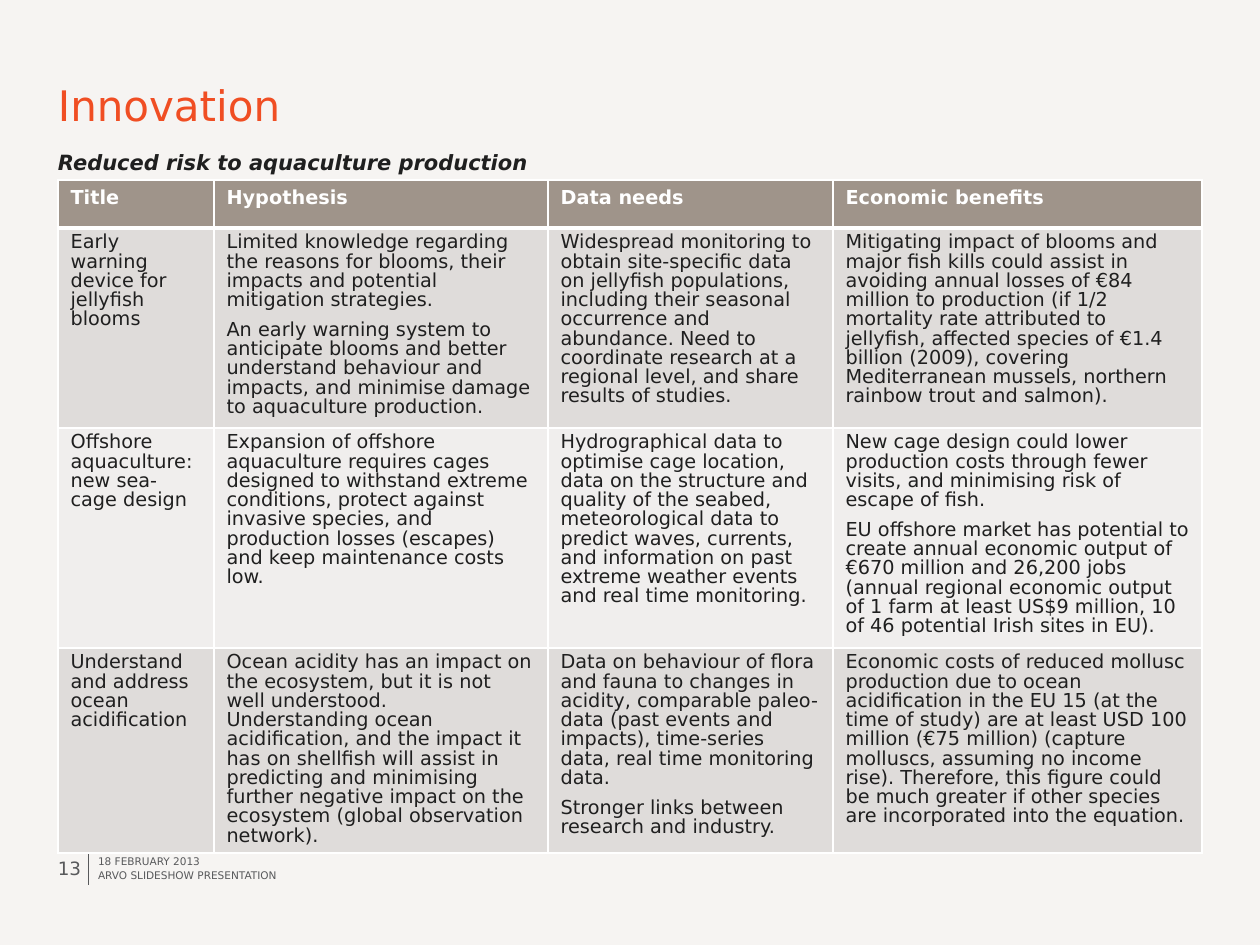
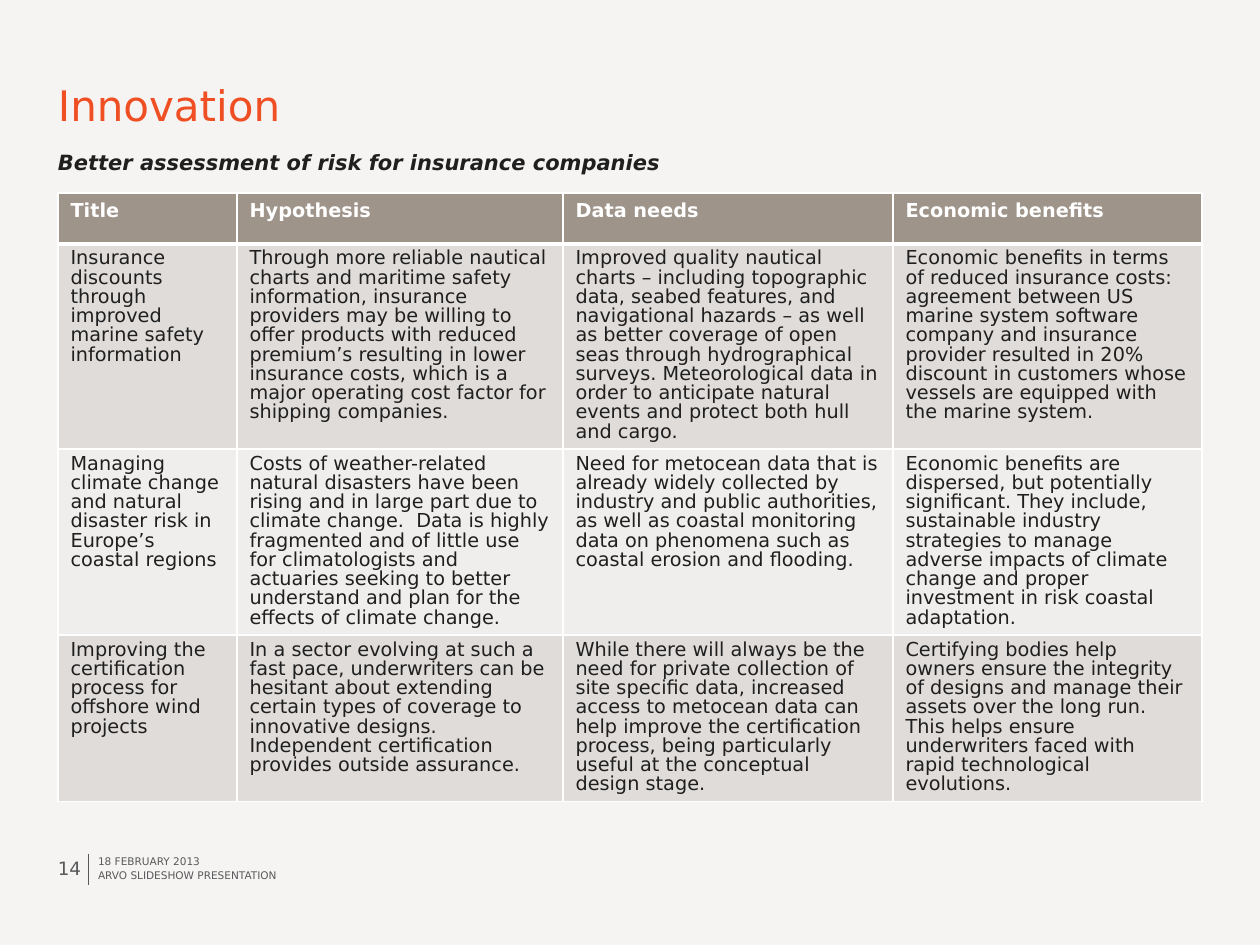
from lxml import etree
from pptx import Presentation
from pptx.dml.color import RGBColor
from pptx.enum.shapes import MSO_CONNECTOR
from pptx.enum.text import MSO_ANCHOR, PP_ALIGN
from pptx.oxml.ns import qn
from pptx.util import Pt

LINE = MSO_CONNECTOR.STRAIGHT
TOP, MIDDLE = MSO_ANCHOR.TOP, MSO_ANCHOR.MIDDLE
LEFT, RIGHT = PP_ALIGN.LEFT, PP_ALIGN.RIGHT

FONT = "DejaVu Sans"
PAPER, INK, ORANGE, GREY = "F6F4F2", "1F1F1F", "F04E23", "58595B"
WHITE, HEADER, BAND_DARK, BAND_LIGHT = "FFFFFF", "9F948A", "DFDCDA", "F0EEED"

SCALE = 914400 / 126
MARGIN, CONTENT_W = 58, 1144


def px(n):
    return round(n * SCALE)


def color(value):
    return RGBColor.from_string(value)


class Deck:
    """Holds the presentation, its style and the current slide."""

    def __init__(self):
        self.prs = Presentation()
        self.prs.slide_width, self.prs.slide_height = px(1260), px(945)
        self.slide = None

    def style(self, font, size, fill, bold=False, italic=False):
        font.name, font.size = FONT, Pt(size)
        font.bold, font.italic = bold, italic
        font.color.rgb = color(fill)

    def new_slide(self):
        self.slide = self.prs.slides.add_slide(self.prs.slide_layouts[6])
        bg = self.slide.background.fill
        bg.solid()
        bg.fore_color.rgb = color(PAPER)

    def frame(self, x, y, w, h, anchor, bottom=0):
        tf = self.slide.shapes.add_textbox(px(x), px(y), px(w), px(h)).text_frame
        tf.word_wrap = True
        tf.margin_left = tf.margin_top = tf.margin_right = 0
        tf.margin_bottom = px(bottom)
        tf.vertical_anchor = anchor
        return tf

    def title(self, heading, subtitle):
        p = self.frame(MARGIN, 84, CONTENT_W, 95, TOP, bottom=5).paragraphs[0]
        p.line_spacing = Pt(26)
        r = p.add_run()
        r.text = heading
        self.style(r.font, 24, ORANGE)
        p.add_line_break()
        r = p.add_run()
        r.text = subtitle
        self.style(r.font, 12, INK, bold=True, italic=True)

    def label(self, text, x, y, w, h, size, align=LEFT):
        p = self.frame(x, y, w, h, MIDDLE).paragraphs[0]
        p.text, p.alignment, p.line_spacing = text, align, Pt(6)
        self.style(p.font, size, GREY)

    def rule(self, x, y1, y2):
        line = self.slide.shapes.add_connector(LINE, px(x), px(y1), px(x), px(y2))
        line.line.color.rgb = color(GREY)
        line.line.width = Pt(0.25)
        etree.SubElement(line._element.spPr, qn("a:effectLst"))

    def footer(self, number):
        self.rule(88, 854, 885)
        self.label("18 FEBRUARY 2013", 98, 856, 270, 13, 6)
        self.label("ARVO SLIDESHOW PRESENTATION", 98, 870, 270, 13, 6)
        self.label(str(number), 24, 839, 57, 69, 10.5, RIGHT)

    def borders(self, cell, top, bottom):
        tc_pr = cell._tc.get_or_add_tcPr()
        sides = {"lnL": 1, "lnR": 1, "lnT": top, "lnB": bottom}
        for i, (side, width) in enumerate(sides.items()):
            ln = etree.Element(qn("a:" + side), w=str(Pt(width)))
            fill = etree.SubElement(ln, qn("a:solidFill"))
            etree.SubElement(fill, qn("a:srgbClr"), val=WHITE)
            tc_pr.insert(i, ln)

    def cell(self, cell, text, row):
        header = row == 0
        cell.fill.solid()
        band = BAND_DARK if row % 2 else BAND_LIGHT
        cell.fill.fore_color.rgb = color(HEADER if header else band)
        self.borders(cell, 3 if row == 1 else 1, 3 if header else 1)
        cell.text = text
        for i, p in enumerate(cell.text_frame.paragraphs):
            if not header:
                p.line_spacing, p.space_after = Pt(11), Pt(3)
                p.space_before = Pt(3 if i else 0)
            self.style(p.font, 11, WHITE if header else INK, bold=header)

    def table(self, y, widths, heights, rows):
        table = self.slide.shapes.add_table(
            len(rows), len(widths), px(MARGIN), px(y),
            px(sum(widths)), px(sum(heights))).table
        for column, width in zip(table.columns, widths):
            column.width = px(width)
        for i, (height, texts) in enumerate(zip(heights, rows)):
            table.rows[i].height = px(height)
            for j, text in enumerate(texts):
                self.cell(table.cell(i, j), text, i)


# Content: a line break inside a cell starts a new paragraph
HEADINGS = ["Title", "Hypothesis", "Data needs", "Economic benefits"]

AQUACULTURE = [
    ["Early warning device for jellyfish blooms",
     "Limited knowledge regarding the reasons for blooms, their impacts and "
     "potential mitigation strategies.\n"
     "An early warning system to anticipate blooms and better understand "
     "behaviour and impacts, and minimise damage to aquaculture production.",
     "Widespread monitoring to obtain site-specific data on jellyfish "
     "populations, including their seasonal occurrence and abundance. Need to "
     "coordinate research at a regional level, and share results of studies.",
     "Mitigating impact of blooms and major fish kills could assist in avoiding "
     "annual losses of €84 million to production (if 1/2 mortality rate "
     "attributed to jellyfish, affected species of €1.4 billion (2009), covering "
     "Mediterranean mussels, northern rainbow trout and salmon)."],
    ["Offshore aquaculture: new sea-cage design",
     "Expansion of offshore aquaculture requires cages designed to withstand "
     "extreme conditions, protect against invasive species, and production "
     "losses (escapes) and keep maintenance costs low.",
     "Hydrographical data to optimise cage location, data on the structure and "
     "quality of the seabed, meteorological data to predict waves, currents, and "
     "information on past extreme weather events and real time monitoring.",
     "New cage design could lower production costs through fewer visits, and "
     "minimising risk of escape of fish.\n"
     "EU offshore market has potential to create annual economic output of "
     "€670 million and 26,200 jobs (annual regional economic output of 1 farm at "
     "least US$9 million, 10 of 46 potential Irish sites in EU)."],
    ["Understand and address ocean acidification",
     "Ocean acidity has an impact on the ecosystem, but it is not well "
     "understood. Understanding ocean acidification, and the impact it has on "
     "shellfish will assist in predicting and minimising further negative impact "
     "on the ecosystem (global observation network).",
     "Data on behaviour of flora and fauna to changes in acidity, comparable "
     "paleo-data (past events and impacts), time-series data, real time "
     "monitoring data.\n"
     "Stronger links between research and industry.",
     "Economic costs of reduced mollusc production due to ocean acidification in "
     "the EU 15 (at the time of study) are at least USD 100 million (€75 million) "
     "(capture molluscs, assuming no income rise). Therefore, this figure could "
     "be much greater if other species are incorporated into the equation."],
]

INSURANCE = [
    ["Insurance discounts through improved marine safety information",
     "Through more reliable nautical charts and maritime safety information, "
     "insurance providers may be willing to offer products with reduced "
     "premium’s resulting in lower insurance costs, which is a major operating "
     "cost factor for shipping companies.",
     "Improved quality nautical charts – including topographic data, seabed "
     "features, and navigational hazards – as well as better coverage of open "
     "seas through hydrographical surveys. Meteorological data in order to "
     "anticipate natural events and protect both hull and cargo.",
     "Economic benefits in terms of reduced insurance costs: agreement between "
     "US marine system software company and insurance provider resulted in 20% "
     "discount in customers whose vessels are equipped with the marine system."],
    ["Managing climate change and natural disaster risk in Europe’s coastal regions",
     "Costs of weather-related natural disasters have been rising and in large "
     "part due to climate change.  Data is highly fragmented and of little use "
     "for climatologists and actuaries seeking to better understand and plan for "
     "the effects of climate change.",
     "Need for metocean data that is already widely collected by industry and "
     "public authorities, as well as coastal monitoring data on phenomena such "
     "as coastal erosion and flooding.",
     "Economic benefits are dispersed, but potentially significant. They "
     "include, sustainable industry strategies to manage adverse impacts of "
     "climate change and proper investment in risk coastal adaptation."],
    ["Improving the certification process for offshore wind projects",
     "In a sector evolving at such a fast pace, underwriters can be hesitant "
     "about extending certain types of coverage to innovative designs. "
     "Independent certification provides outside assurance.",
     "While there will always be the need for private collection of site "
     "specific data, increased access to metocean data can help improve the "
     "certification process, being particularly useful at the conceptual design "
     "stage.",
     "Certifying bodies help owners ensure the integrity of designs and manage "
     "their assets over the long run. This helps ensure underwriters faced with "
     "rapid technological evolutions."],
]

# Slides: number, subtitle, table top, column widths, row heights, body rows
SLIDES = [
    (13, "Reduced risk to aquaculture production", 180,
     [156, 334, 285, 369], [48, 200, 220, 205], AQUACULTURE),
    (14, "Better assessment of risk for insurance companies", 193,
     [179, 326, 330, 309], [51, 205, 186, 166], INSURANCE),
]


def main():
    deck = Deck()
    for number, subtitle, top, widths, heights, body in SLIDES:
        deck.new_slide()
        deck.title("Innovation", subtitle)
        deck.footer(number)
        deck.table(top, widths, heights, [HEADINGS] + body)
    deck.prs.save("out.pptx")


if __name__ == "__main__":
    main()
